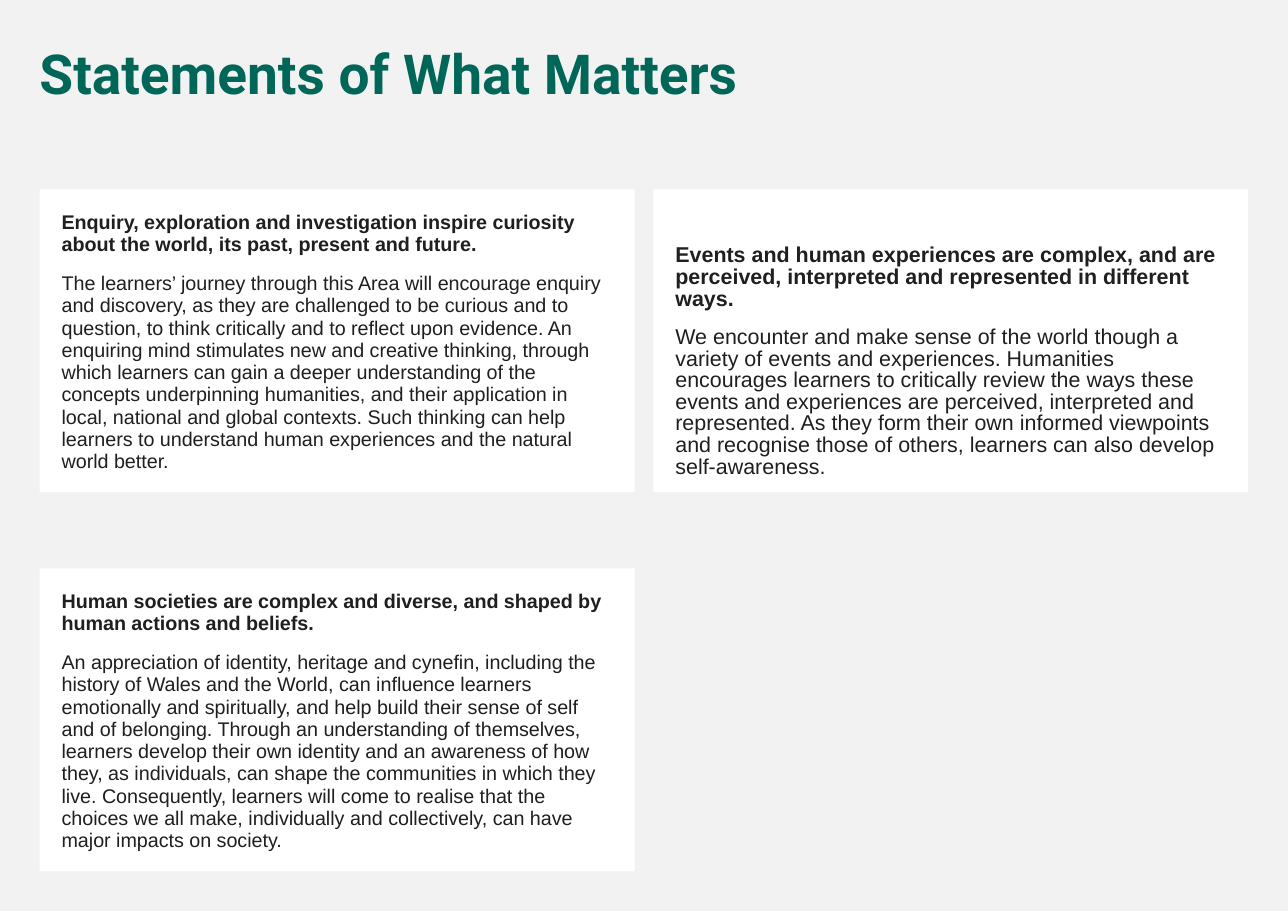
from pptx import Presentation
from pptx.dml.color import RGBColor
from pptx.enum.shapes import MSO_SHAPE as SHAPE
from pptx.enum.text import MSO_ANCHOR as ANCHOR, PP_ALIGN as ALIGN
from pptx.util import Inches, Pt

PAGE = RGBColor(0xF2, 0xF2, 0xF2)
WHITE = RGBColor(0xFF, 0xFF, 0xFF)
INK = RGBColor(0x1F, 0x1F, 0x1F)
GREEN = RGBColor(0x00, 0x67, 0x58)

LEFT, TOP = 0.36, 1.72
CARD_W, CARD_H = 5.4, 2.75
COL_PITCH, ROW_PITCH = 5.57, 3.44
PADDING = 0.2

# column, row, font size, line spacing, extra space on top, heading, body
STATEMENTS = [
    (0, 0, 12.9, 0.94, 0,
     "Enquiry, exploration and investigation inspire curiosity about the world, "
     "its past, present and future.",
     "The learners’ journey through this Area will encourage enquiry and discovery, "
     "as they are challenged to be curious and to question, to think critically and "
     "to reflect upon evidence. An enquiring mind stimulates new and creative "
     "thinking, through which learners can gain a deeper understanding of the "
     "concepts underpinning humanities, and their application in local, national "
     "and global contexts. Such thinking can help learners to understand human "
     "experiences and the natural world better."),
    (1, 0, 14, 0.84, 0.31,
     "Events and human experiences are complex, and are perceived, interpreted and "
     "represented in different ways.",
     "We encounter and make sense of the world though a variety of events and "
     "experiences. Humanities encourages learners to critically review the ways "
     "these events and experiences are perceived, interpreted and represented. As "
     "they form their own informed viewpoints and recognise those of others, "
     "learners can also develop self-awareness."),
    (0, 1, 12.9, 0.94, 0,
     "Human societies are complex and diverse, and shaped by human actions and "
     "beliefs.",
     "An appreciation of identity, heritage and cynefin, including the history of "
     "Wales and the World, can influence learners emotionally and spiritually, and "
     "help build their sense of self and of belonging. Through an understanding of "
     "themselves, learners develop their own identity and an awareness of how they, "
     "as individuals, can shape the communities in which they live. Consequently, "
     "learners will come to realise that the choices we all make, individually and "
     "collectively, can have major impacts on society."),
]


def format_paragraph(p, font, size, color, bold, spacing):
    p.alignment = ALIGN.LEFT
    p.line_spacing = spacing
    for r in p.runs:
        r.font.name = font
        r.font.size = Pt(size)
        r.font.bold = bold
        r.font.color.rgb = color


def add_title(slide, text):
    box = slide.shapes.add_textbox(Inches(0.26), Inches(0.36), Inches(11.08), Inches(0.65))
    tf = box.text_frame
    tf.word_wrap = True
    tf.text = text
    format_paragraph(tf.paragraphs[0], "Roboto", 36, GREEN, True, 0.94)


def add_statement(slide, col, row, size, spacing, extra_top, heading, body):
    """Add a white card with a bold heading above its body text."""
    sp = slide.shapes.add_shape(
        SHAPE.RECTANGLE, Inches(LEFT + col * COL_PITCH), Inches(TOP + row * ROW_PITCH),
        Inches(CARD_W), Inches(CARD_H))
    sp.shadow.inherit = False
    sp.fill.solid()
    sp.fill.fore_color.rgb = WHITE
    sp.line.fill.background()

    tf = sp.text_frame
    tf.word_wrap = True
    tf.vertical_anchor = ANCHOR.TOP
    tf.margin_left = tf.margin_right = tf.margin_bottom = Inches(PADDING)
    tf.margin_top = Inches(PADDING + extra_top)
    tf.text = heading
    format_paragraph(tf.paragraphs[0], "Arial", size, INK, True, spacing)
    p = tf.add_paragraph()
    p.text = body
    p.space_before = Pt(11)
    format_paragraph(p, "Arial", size, INK, False, spacing)


def main():
    prs = Presentation()
    prs.slide_width, prs.slide_height = Inches(11.69), Inches(8.27)
    slide = prs.slides.add_slide(prs.slide_layouts[6])
    slide.background.fill.solid()
    slide.background.fill.fore_color.rgb = PAGE
    add_title(slide, "Statements of What Matters")
    for statement in STATEMENTS:
        add_statement(slide, *statement)
    prs.save("out.pptx")


if __name__ == "__main__":
    main()
